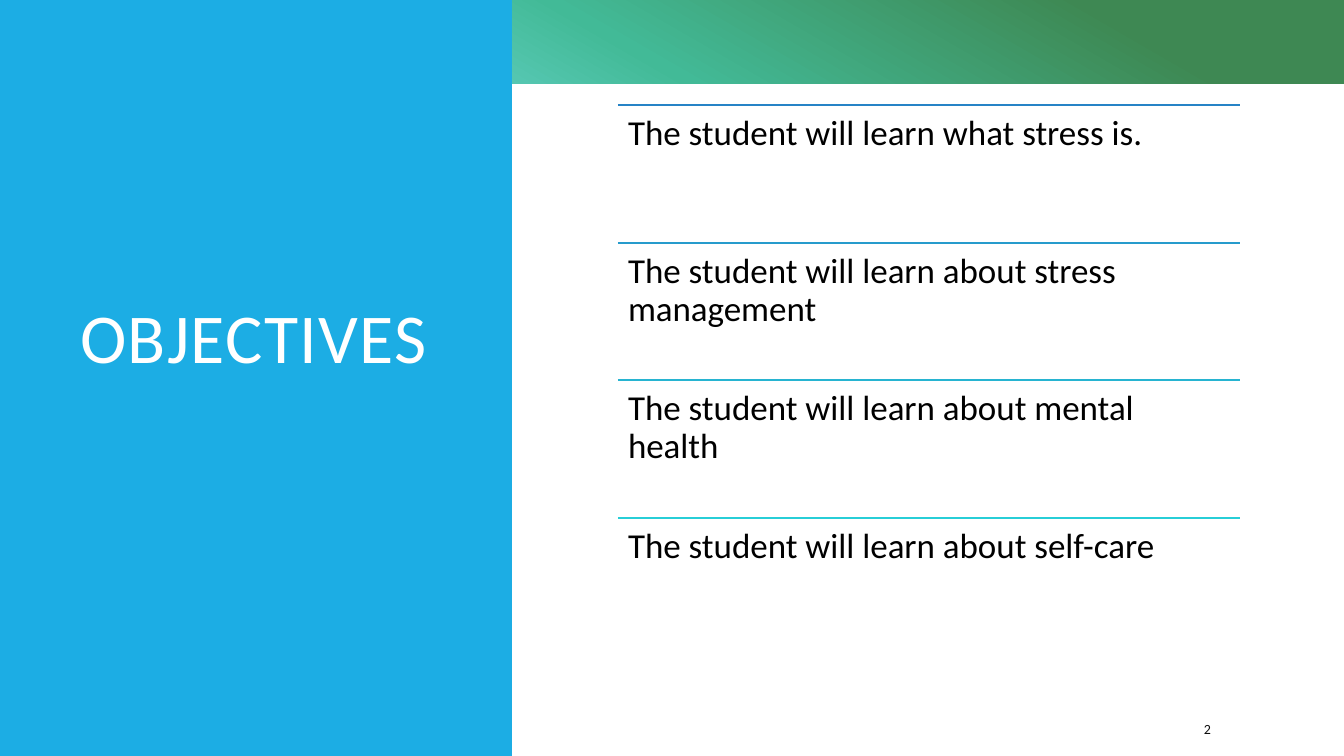
"""Build the objectives slide with a title panel and four ruled statements."""
from lxml import etree
from pptx import Presentation, util as u
from pptx.dml.color import RGBColor
from pptx.enum import shapes, text
from pptx.oxml import ns

SCALE = 914400 / 100.8


def px(n):
    """Turn whole pixels into EMU."""
    return u.Emu(round(n * SCALE))


def rgb(value):
    """Turn a hex string into a colour."""
    return RGBColor.from_string(value)


class Deck:
    """Hold the style and the current slide."""

    font = "Calibri"

    def __init__(self, width, height):
        """Start a deck with one title-only slide."""
        self.prs = Presentation()
        self.prs.slide_width, self.prs.slide_height = px(width), px(height)
        self.s = self.prs.slides.add_slide(self.prs.slide_layouts[5])

    def rect(self, x, y, w, h, fill=None):
        """Add a borderless rectangle."""
        sp = self.s.shapes.add_shape(shapes.MSO_SHAPE.RECTANGLE, px(x), px(y), px(w), px(h))
        sp.shadow.inherit = False
        sp.line.fill.background()
        if fill:
            sp.fill.solid()
            sp.fill.fore_color.rgb = rgb(fill)
        return sp

    def gradient(self, x, y, w, h, stops, angle):
        """Add a rectangle with a linear gradient at a clockwise angle."""
        sp = self.rect(x, y, w, h)
        sp.fill.gradient()
        sp.fill.gradient_angle = 360 - angle
        gs_lst = sp.element.spPr.find(".//" + ns.qn("a:gsLst"))
        for gs in list(gs_lst):
            gs_lst.remove(gs)
        for pos, color in stops:
            gs = etree.SubElement(gs_lst, ns.qn("a:gs"), pos=str(pos * 1000))
            etree.SubElement(gs, ns.qn("a:srgbClr"), val=color)

    def label(self, sp, words, size, color, frame, para):
        """Fill and format the text of a shape."""
        tf = sp.text_frame
        tf.text = words
        p = tf.paragraphs[0]
        r = p.runs[0]
        formats = (
            (tf, {"word_wrap": True, "auto_size": text.MSO_AUTO_SIZE.NONE, **frame}),
            (p, {"alignment": text.PP_ALIGN.LEFT, **para}),
            (r.font, {"name": self.font, "size": u.Pt(size)}),
        )
        for target, values in formats:
            for key, value in values.items():
                setattr(target, key, value)
        r.font.color.rgb = rgb(color)
        return r

    def title(self, x, y, w, h, words, size, color, frame):
        """Place and format the title above the panels."""
        sp = self.s.shapes.title
        sp.left, sp.top, sp.width, sp.height = px(x), px(y), px(w), px(h)
        r = self.label(sp, words, size, color, frame, {"line_spacing": 0.8})
        r.font._element.set("spc", "100")
        sp.element.getparent().append(sp.element)

    def textbox(self, x, y, w, h, words, size, color, frame, para, parent=None):
        """Add a text box to the slide or to a group."""
        sp = (parent or self.s).shapes.add_textbox(px(x), px(y), px(w), px(h))
        self.label(sp, words, size, color, frame, para)

    def rule(self, x, y, w, color, parent):
        """Add a horizontal line to a group."""
        sp = parent.shapes.add_connector(shapes.MSO_CONNECTOR.STRAIGHT, px(x), px(y), px(x + w), px(y))
        sp.line.color.rgb = rgb(color)
        sp.line.width = u.Pt(1.25)
        etree.SubElement(sp._element.spPr, ns.qn("a:effectLst"))


def main():
    """Draw the slide and save it."""
    d = Deck(1344, 756)
    stops = [(10, "3E8853"), (30, "42BA97"), (50, "7DE2E7"), (70, "2683C6"), (90, "1CADE4")]
    d.gradient(0, 0, 1344, 756, stops, 120)
    d.rect(0, 84, 1344, 672, "FFFFFF")
    d.rect(0, 0, 512, 756, "1CADE4")
    middle = {"vertical_anchor": text.MSO_ANCHOR.MIDDLE}
    d.title(70, 70, 377, 614, "OBJECTIVES", 50, "FFFFFF", {**middle, "margin_bottom": px(73)})
    d.textbox(1194, 714, 107, 30, "2", 10, "0D0D0D", middle, {"space_after": u.Pt(6)})

    objectives = (
        ("The student will learn what stress is.", "2683C6"),
        ("The student will learn about stress management", "269BCC"),
        ("The student will learn about mental health", "27B4D1"),
        ("The student will learn about self-care", "27CED7"),
    )
    sides = ("left", "top", "right", "bottom")
    inset = {f"margin_{side}": px(10) for side in sides}
    group = d.s.shapes.add_group_shape()
    for i, (words, color) in enumerate(objectives):
        y = 105 + round(i * 413 / 3)
        d.rule(618, y, 622, color, group)
        d.textbox(618, y, 622, 138, words, 25, "000000", inset, {"line_spacing": 0.9}, group)
    d.prs.save("out.pptx")


if __name__ == "__main__":
    main()
